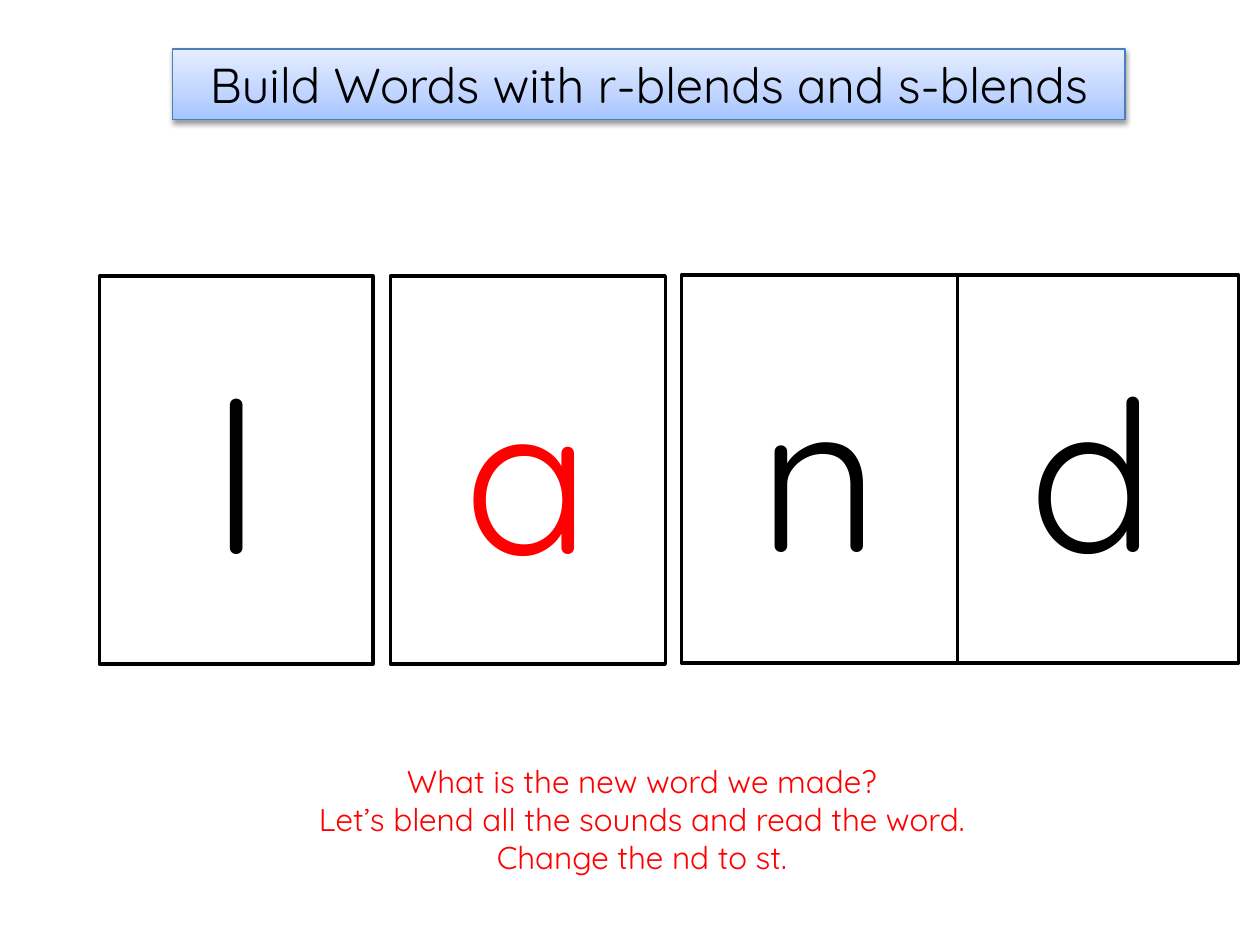
from typing import NamedTuple

from lxml.etree import SubElement
from pptx import Presentation
from pptx.dml.color import RGBColor
from pptx.enum.shapes import MSO_SHAPE
from pptx.enum.text import MSO_ANCHOR, MSO_AUTO_SIZE, PP_ALIGN
from pptx.oxml.ns import qn
from pptx.shapes.autoshape import Shape
from pptx.slide import Slide
from pptx.text.text import TextFrame
from pptx.util import Pt

FONT = "Quicksand"
BLACK = RGBColor(0x00, 0x00, 0x00)
WHITE = RGBColor(0xFF, 0xFF, 0xFF)
RED = RGBColor(0xFF, 0x00, 0x00)
TITLE_LINE = RGBColor(0x4B, 0x7E, 0xBC)
TITLE_STOPS = [
    (0, RGBColor(0xA4, 0xC4, 0xFF)),
    (35, RGBColor(0xBF, 0xD4, 0xFF)),
    (100, RGBColor(0xE6, 0xEE, 0xFF)),
]
CARD_HEIGHT = 221.8


class Card(NamedTuple):
    letter: str
    left: float
    top: float
    width: float
    color: RGBColor


# Back to front: the n card overlaps the d card
CARDS = [
    Card("a", 223.2, 157.7, 157, RED),
    Card("d", 540.7, 157, 167, BLACK),
    Card("n", 389.5, 157, 157.7, BLACK),
    Card("l", 56.9, 157.7, 156.2, BLACK),
]
QUESTIONS = [
    "What is the new word we made?",
    "Let’s blend all the sounds and read the word.",
    "Change the nd to st.",
]


def write_lines(tf: TextFrame, lines: list[str], size: float, color: RGBColor) -> None:
    tf.word_wrap = True
    for i, line in enumerate(lines):
        p = tf.add_paragraph() if i else tf.paragraphs[0]
        p.alignment = PP_ALIGN.CENTER
        r = p.add_run()
        r.text = line
        r.font.name = FONT
        r.font.size = Pt(size)
        r.font.color.rgb = color


def add_box(s: Slide, left: float, top: float, width: float, height: float,
            line: RGBColor, weight: float) -> Shape:
    sp = s.shapes.add_shape(MSO_SHAPE.RECTANGLE, Pt(left), Pt(top), Pt(width), Pt(height))
    sp.shadow.inherit = False
    sp.line.color.rgb = line
    sp.line.width = Pt(weight)
    sp.text_frame.vertical_anchor = MSO_ANCHOR.MIDDLE
    return sp


def fill_gradient(sp: Shape, stops: list[tuple[int, RGBColor]]) -> None:
    sp.fill.gradient()
    sp.fill.gradient_angle = 90
    stop_list = sp.element.spPr.find(".//" + qn("a:gsLst"))
    stop_list.clear()
    for percent, color in stops:
        stop = SubElement(stop_list, qn("a:gs"), pos=str(percent * 1000))
        SubElement(stop, qn("a:srgbClr"), val=str(color))


def add_shadow(sp: Shape, blur: float, distance: float, opacity: int) -> None:
    effects = sp.element.spPr.find(qn("a:effectLst"))
    shadow = SubElement(effects, qn("a:outerShdw"), blurRad=str(Pt(blur)),
                        dist=str(Pt(distance)), dir="5400000", rotWithShape="0")
    color = SubElement(shadow, qn("a:srgbClr"), val=str(BLACK))
    SubElement(color, qn("a:alpha"), val=str(opacity * 1000))


def add_card(s: Slide, card: Card) -> None:
    sp = add_box(s, card.left, card.top, card.width, CARD_HEIGHT, BLACK, 2)
    sp.fill.solid()
    sp.fill.fore_color.rgb = WHITE
    write_lines(sp.text_frame, [card.letter], 120, card.color)


def main() -> None:
    prs = Presentation()
    prs.slide_width, prs.slide_height = Pt(720), Pt(540)
    s = prs.slides.add_slide(prs.slide_layouts[6])

    # Title banner
    title = add_box(s, 98.6, 28.1, 544.3, 40.3, TITLE_LINE, 0.75)
    fill_gradient(title, TITLE_STOPS)
    add_shadow(title, 3.1, 1.6, 38)
    write_lines(title.text_frame, ["Build Words with r-blends and s-blends"], 28, BLACK)

    # Letter cards
    for card in CARDS:
        add_card(s, card)

    # Questions for the class
    tb = s.shapes.add_textbox(Pt(115.9), Pt(432), Pt(501.8), Pt(72.7))
    write_lines(tb.text_frame, QUESTIONS, 18, RED)
    tb.text_frame.auto_size = MSO_AUTO_SIZE.SHAPE_TO_FIT_TEXT

    prs.save("out.pptx")


if __name__ == "__main__":
    main()
